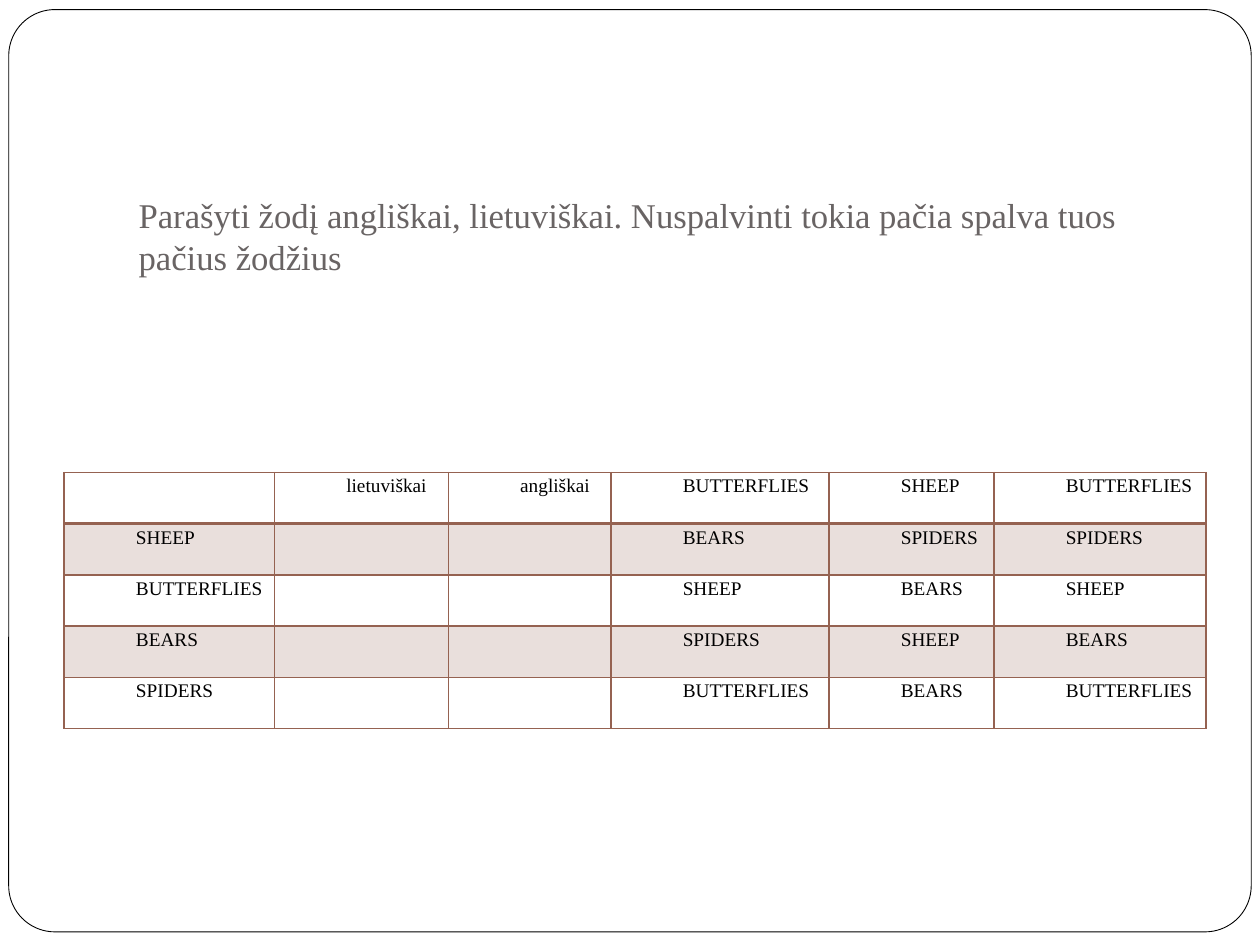
from lxml.etree import SubElement
from pptx import Presentation
from pptx.dml.color import RGBColor
from pptx.enum.shapes import MSO_SHAPE
from pptx.enum.text import MSO_ANCHOR, MSO_AUTO_SIZE, PP_ALIGN
from pptx.oxml.ns import qn
from pptx.util import Pt

WHITE = RGBColor(0xFF, 0xFF, 0xFF)
BLACK = RGBColor(0, 0, 0)
GRAY = RGBColor(0x69, 0x64, 0x64)
BROWN = RGBColor(0x95, 0x62, 0x51)

TITLE = ("Parašyti žodį angliškai, lietuviškai. "
         "Nuspalvinti tokia pačia spalva tuos pačius žodžius")
WORDS = [
    ["", "lietuviškai", "angliškai", "BUTTERFLIES", "SHEEP", "BUTTERFLIES"],
    ["SHEEP", "", "", "BEARS", "SPIDERS", "SPIDERS"],
    ["BUTTERFLIES", "", "", "SHEEP", "BEARS", "SHEEP"],
    ["BEARS", "", "", "SPIDERS", "SHEEP", "BEARS"],
    ["SPIDERS", "", "", "BUTTERFLIES", "BEARS", "BUTTERFLIES"],
]
COLUMN_WIDTHS = [120.2, 99.4, 92.9, 124.6, 94.3, 121]
ROW_HEIGHT = 29.3


def write(frame, text, *, size, color, font, align, spacing, indent=0):
    para = frame.paragraphs[0]
    para.alignment = align
    para.line_spacing = spacing
    if indent:
        properties = para._p.get_or_add_pPr()
        properties.set("marL", str(Pt(indent)))
        properties.set("indent", "0")
    span = para.add_run()
    span.text = text
    span.font.size = Pt(size)
    span.font.name = font
    span.font.color.rgb = color


def set_margins(target, left, top, right, bottom):
    target.margin_left, target.margin_top = Pt(left), Pt(top)
    target.margin_right, target.margin_bottom = Pt(right), Pt(bottom)


def add_borders(cell, color, bottom):
    """Draw 1 pt cell edges, with a bottom edge of its own width."""
    properties = cell._tc.get_or_add_tcPr()
    widths = {"lnL": 1, "lnR": 1, "lnT": 1, "lnB": bottom}
    for position, (edge, width) in enumerate(widths.items()):
        line = SubElement(properties, qn(f"a:{edge}"), w=str(Pt(width)))
        fill = SubElement(line, qn("a:solidFill"))
        SubElement(fill, qn("a:srgbClr"), val=str(color))
        properties.insert(position, line)


def tint(cell, color, percent):
    cell.fill.solid()
    cell.fill.fore_color.rgb = color
    tone = cell._tc.tcPr.find(qn("a:solidFill")).find(qn("a:srgbClr"))
    SubElement(tone, qn("a:alpha"), val=str(percent * 1000))


class Page:
    font = "Times New Roman"

    def __init__(self, deck):
        self.slide = deck.slides.add_slide(deck.slide_layouts[5])

    def frame(self, left, top, width, height):
        """Put a rounded outline behind everything else."""
        box = self.slide.shapes.add_shape(
            MSO_SHAPE.ROUNDED_RECTANGLE, Pt(left), Pt(top), Pt(width), Pt(height))
        box.adjustments[0] = 0.05
        box.shadow.inherit = False
        box.fill.solid()
        box.fill.fore_color.rgb = WHITE
        box.line.color.rgb = BLACK
        box.line.width = Pt(0.5)
        self.slide.shapes._spTree.insert(2, box._element)

    def title(self, text, left, top, width, height):
        box = self.slide.shapes.title
        box.left, box.top = Pt(left), Pt(top)
        box.width, box.height = Pt(width), Pt(height)
        frame = box.text_frame
        frame.word_wrap = True
        frame.auto_size = MSO_AUTO_SIZE.NONE
        frame.vertical_anchor = MSO_ANCHOR.BOTTOM
        set_margins(frame, 7.2, 3.6, 7.2, 49)
        write(frame, text, size=19.8, color=GRAY, font=self.font,
              align=PP_ALIGN.LEFT, spacing=Pt(24))

    def table(self, words, left, top):
        table = self.slide.shapes.add_table(
            len(words), len(COLUMN_WIDTHS), Pt(left), Pt(top),
            Pt(sum(COLUMN_WIDTHS)), Pt(ROW_HEIGHT * len(words))).table
        table.first_row = table.horz_banding = False
        for column, width in zip(table.columns, COLUMN_WIDTHS):
            column.width = Pt(width)
        for index, (row, texts) in enumerate(zip(table.rows, words)):
            row.height = Pt(ROW_HEIGHT)
            for cell, text in zip(row.cells, texts):
                set_margins(cell, 5, 0, 5, 0)
                if text:
                    write(cell.text_frame, text, size=11, color=BLACK,
                          font=self.font, align=PP_ALIGN.JUSTIFY,
                          spacing=1.15, indent=36)
                if index % 2:
                    tint(cell, BROWN, 20)
                else:
                    cell.fill.background()
                add_borders(cell, BROWN, bottom=1 if index else 2)


def main():
    deck = Presentation()
    deck.slide_width, deck.slide_height = Pt(720), Pt(540)
    page = Page(deck)
    page.frame(5, 5.5, 710, 527)
    page.title(TITLE, 72, 21.6, 612, 185.8)
    page.table(WORDS, 36.7, 270)
    deck.save("out.pptx")


if __name__ == "__main__":
    main()
